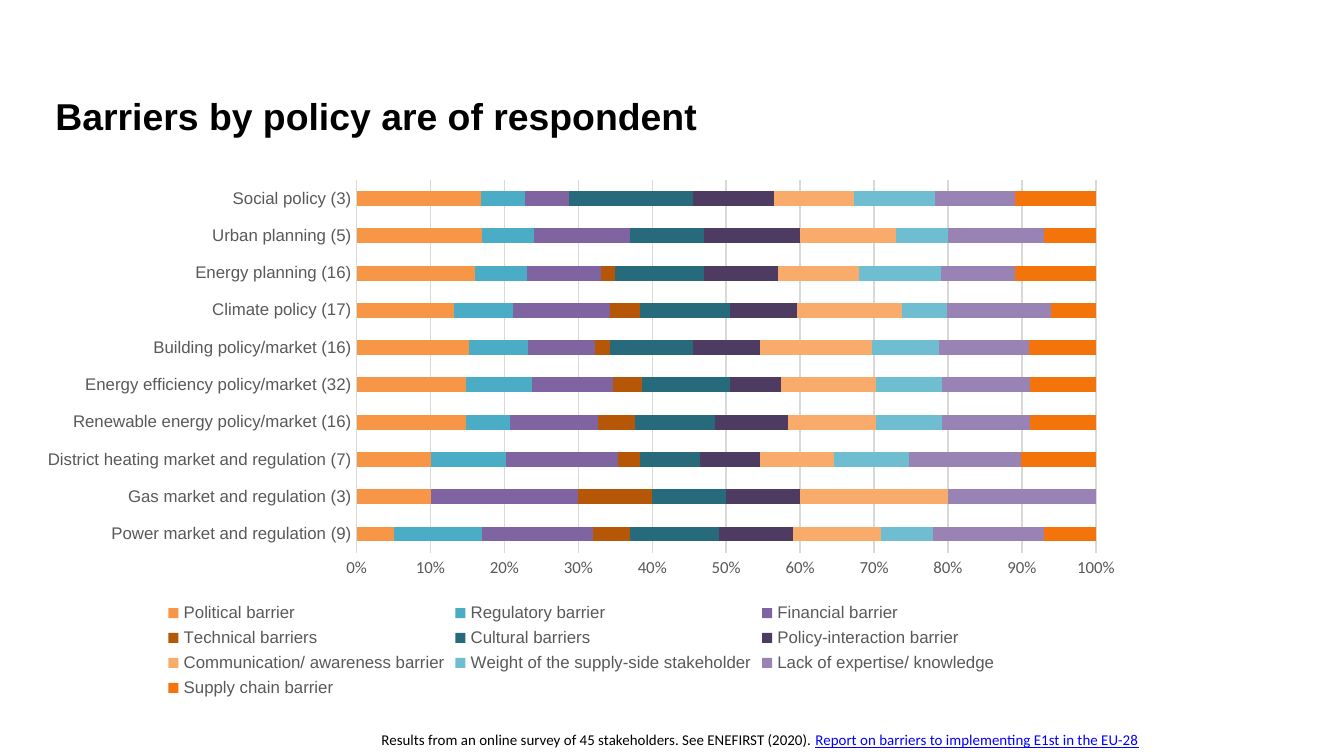
from pptx import Presentation
from pptx.chart.data import CategoryChartData
from pptx.dml.color import RGBColor
from pptx.enum import chart as ch, text as t
from pptx.util import Inches, Pt

WIDTH = Inches(10)
HEIGHT = WIDTH * 9 // 16
BLACK = RGBColor(0x00, 0x00, 0x00)
LINK = RGBColor(0x00, 0x00, 0xFF)
GREY = RGBColor(0x59, 0x59, 0x59)
GRID = RGBColor(0xD9, 0xD9, 0xD9)

POLICY_AREAS = [
    "Power market and regulation (9)",
    "Gas market and regulation (3)",
    "District heating market and regulation (7)",
    "Renewable energy policy/market (16)",
    "Energy efficiency policy/market (32)",
    "Building policy/market (16)",
    "Climate policy (17)",
    "Energy planning (16)",
    "Urban planning (5)",
    "Social policy (3)",
]
BARRIERS = [
    ("Political barrier", RGBColor(0xF7, 0x96, 0x46), (5, 10, 10, 15, 15, 15, 13, 16, 17, 17)),
    ("Regulatory barrier", RGBColor(0x4B, 0xAC, 0xC6), (12, 0, 10, 6, 9, 8, 8, 7, 7, 6)),
    ("Financial barrier", RGBColor(0x80, 0x64, 0xA2), (15, 20, 15, 12, 11, 9, 13, 10, 13, 6)),
    ("Technical barriers", RGBColor(0xB6, 0x57, 0x08), (5, 10, 3, 5, 4, 2, 4, 2, 0, 0)),
    ("Cultural barriers", RGBColor(0x27, 0x6A, 0x7C), (12, 10, 8, 11, 12, 11, 12, 12, 10, 17)),
    ("Policy-interaction barrier", RGBColor(0x4D, 0x3B, 0x62), (10, 10, 8, 10, 7, 9, 9, 10, 13, 11)),
    ("Communication/ awareness barrier", RGBColor(0xF9, 0xAB, 0x6B),
     (12, 20, 10, 12, 13, 15, 14, 11, 13, 11)),
    ("Weight of the supply-side stakeholder", RGBColor(0x6F, 0xBD, 0xD1),
     (7, 0, 10, 9, 9, 9, 6, 11, 7, 11)),
    ("Lack of expertise/ knowledge", RGBColor(0x99, 0x83, 0xB5),
     (15, 20, 15, 12, 12, 12, 14, 10, 13, 11)),
    ("Supply chain barrier", RGBColor(0xF3, 0x74, 0x0B), (7, 0, 10, 9, 9, 9, 6, 11, 7, 11)),
]


def area(left, top, width, height):
    """Turn percentages of the slide's size into lengths."""
    return (int(WIDTH * left / 100), int(HEIGHT * top / 100),
            int(WIDTH * width / 100), int(HEIGHT * height / 100))


def set_font(font, name, size, color):
    font.name, font.size = name, Pt(size)
    font.color.rgb = color


def add_text(s, box, runs, name, size, anchor=t.MSO_ANCHOR.TOP):
    """Add one line of (text, colour) runs and return the runs."""
    tf = s.shapes.add_textbox(*box).text_frame
    tf.word_wrap = True
    tf.vertical_anchor = anchor
    p = tf.paragraphs[0]
    for content, color in runs:
        r = p.add_run()
        r.text = content
        set_font(r.font, name, size, color)
    return p.runs


def style_axis(axis, font_name):
    axis.major_tick_mark = axis.minor_tick_mark = ch.XL_TICK_MARK.NONE
    axis.format.line.fill.background()
    set_font(axis.tick_labels.font, font_name, 9, GREY)


def add_barrier_chart(s, box):
    data = CategoryChartData()
    data.categories = POLICY_AREAS
    for name, _, values in BARRIERS:
        data.add_series(name, values)
    chart = s.shapes.add_chart(ch.XL_CHART_TYPE.BAR_STACKED_100, *box, data).chart
    chart.has_title = False
    set_font(chart.font, "Calibri", 10, BLACK)

    plot = chart.plots[0]
    plot.gap_width, plot.overlap = 150, 100
    plot.vary_by_categories = False
    for series, (_, color, _) in zip(plot.series, BARRIERS):
        series.format.fill.solid()
        series.format.fill.fore_color.rgb = color

    style_axis(chart.category_axis, "Arial")
    axis = chart.value_axis
    style_axis(axis, "Calibri")
    axis.tick_labels.number_format = "0%"
    axis.tick_labels.number_format_is_linked = False
    axis.has_major_gridlines = True
    axis.major_gridlines.format.line.color.rgb = GRID
    axis.major_gridlines.format.line.width = Pt(0.75)

    chart.has_legend = True
    chart.legend.position = ch.XL_LEGEND_POSITION.BOTTOM
    chart.legend.include_in_layout = False
    set_font(chart.legend.font, "Arial", 9, GREY)


def main():
    prs = Presentation()
    prs.slide_width, prs.slide_height = WIDTH, HEIGHT
    s = prs.slides.add_slide(prs.slide_layouts[6])

    title = add_text(s, area(3.14, 11.4, 60.3, 7.8),
                     [("Barriers by policy are of respondent", BLACK)],
                     "Arial", 20, t.MSO_ANCHOR.MIDDLE)
    title[0].font.bold = True
    add_barrier_chart(s, area(1.9, 22.4, 82.7, 70.6))
    source = add_text(s, area(27.4, 95.8, 59.4, 4.2), [
        ("Results from an online survey of 45 stakeholders. See ENEFIRST (2020). ", BLACK),
        ("Report on barriers to implementing E1st in the EU-28", LINK),
    ], "Calibri", 8)
    source[-1].font.underline = True
    prs.save("out.pptx")


if __name__ == "__main__":
    main()
